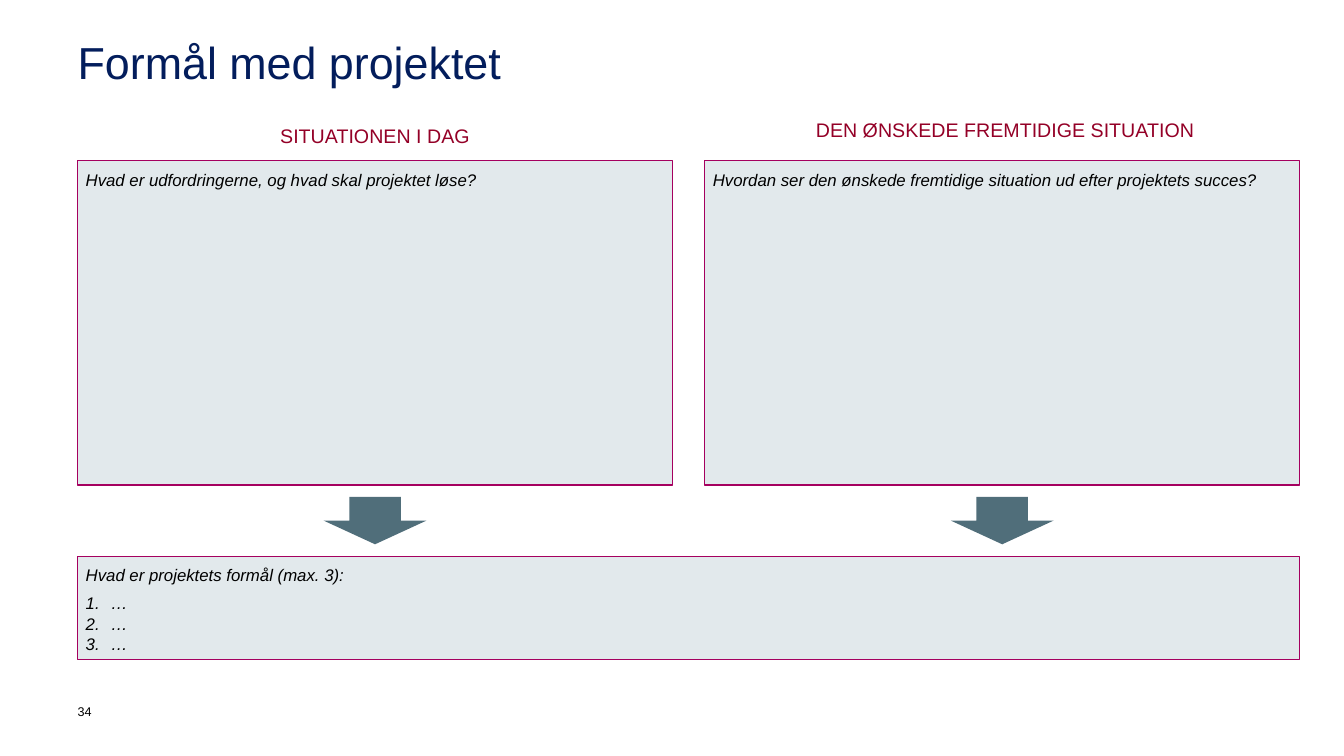
"""Build a slide on the purpose of a project."""
from dataclasses import dataclass

from lxml.etree import SubElement
from pptx import Presentation
from pptx.dml.color import RGBColor
from pptx.enum.shapes import MSO_SHAPE
from pptx.enum.text import MSO_ANCHOR, PP_ALIGN
from pptx.oxml.ns import qn
from pptx.shapes.autoshape import Shape
from pptx.slide import Slide
from pptx.text.text import _Paragraph as Para
from pptx.util import Inches, Pt


@dataclass(frozen=True)
class Theme:
    """Colours, type sizes and font of the slide."""
    face: str = "Arial"
    navy: str = "031D5C"
    wine: str = "940027"
    edge: str = "A5005F"
    pale: str = "E2E9EC"
    slate: str = "506E7A"
    black: str = "000000"
    title: int = 32
    head: int = 14
    body: int = 12
    small: int = 9


@dataclass(frozen=True)
class Area:
    """A rectangle in inches."""
    left: float
    top: float
    width: float
    height: float


@dataclass(frozen=True)
class Column:
    """A heading above a panel that leads down by an arrow."""
    left: float
    title: str
    head: Area
    prompt: str


THEME = Theme()
LEFT = 0.77
WIDE = 5.9
RIGHT = 6.99
COLUMNS = [
    Column(LEFT, "SITUATIONEN I DAG", Area(LEFT, 1.21, WIDE, 0.24),
           "Hvad er udfordringerne, og hvad skal projektet løse?"),
    Column(RIGHT, "DEN ØNSKEDE FREMTIDIGE SITUATION", Area(7.05, 1.15, 5.84, 0.24),
           "Hvordan ser den ønskede fremtidige situation ud efter projektets succes?"),
]


def style(para: Para, size: int, color: str, italic: bool = False) -> None:
    """Set the font of a paragraph."""
    font = para.font
    font.name, font.size, font.italic = THEME.face, Pt(size), italic
    font.color.rgb = RGBColor.from_string(color)


def label(slide: Slide, area: Area, text: str, size: int, color: str,
          space: float = 1.0, align: PP_ALIGN = PP_ALIGN.LEFT) -> None:
    """Add a line of text without margins."""
    box = slide.shapes.add_textbox(Inches(area.left), Inches(area.top),
                                   Inches(area.width), Inches(area.height))
    frame = box.text_frame
    frame.word_wrap = True
    frame.margin_left = frame.margin_right = frame.margin_top = frame.margin_bottom = 0
    para = frame.paragraphs[0]
    para.text, para.alignment, para.line_spacing = text, align, space
    style(para, size, color)


def solid(slide: Slide, kind: MSO_SHAPE, area: Area, color: str) -> Shape:
    """Add a filled shape with no line or shadow."""
    shape = slide.shapes.add_shape(kind, Inches(area.left), Inches(area.top),
                                   Inches(area.width), Inches(area.height))
    shape.shadow.inherit = False
    shape.fill.solid()
    shape.fill.fore_color.rgb = RGBColor.from_string(color)
    shape.line.fill.background()
    return shape


def panel(slide: Slide, area: Area, prompt: str, space: float = 1.08) -> Shape:
    """Add a framed panel with a prompt at its top."""
    shape = solid(slide, MSO_SHAPE.RECTANGLE, area, THEME.pale)
    shape.line.color.rgb = RGBColor.from_string(THEME.edge)
    shape.line.width = Pt(1)
    frame = shape.text_frame
    frame.word_wrap = True
    frame.vertical_anchor = MSO_ANCHOR.TOP
    frame.margin_left = frame.margin_right = Inches(0.08)
    frame.margin_top = frame.margin_bottom = Inches(0.08)
    para = frame.paragraphs[0]
    para.text, para.alignment, para.line_spacing = prompt, PP_ALIGN.LEFT, space
    style(para, THEME.body, THEME.black, True)
    return shape


def number(para: Para) -> None:
    """Give a paragraph an automatic number and a hanging indent."""
    props = para._p.get_or_add_pPr()
    props.set("marL", str(Inches(0.25)))
    props.set("indent", str(-Inches(0.25)))
    SubElement(props, qn("a:buFont"), typeface=THEME.face)
    SubElement(props, qn("a:buAutoNum"), type="arabicPeriod")


def goals(slide: Slide) -> None:
    """Add the panel with the numbered goals."""
    area = Area(LEFT, 5.52, RIGHT + WIDE - LEFT, 1.02)
    frame = panel(slide, area, "Hvad er projektets formål (max. 3):", 1.0).text_frame
    frame.paragraphs[0].space_after = Pt(6)
    for _ in range(3):
        para = frame.add_paragraph()
        para.text, para.alignment = "…", PP_ALIGN.LEFT
        number(para)
        style(para, THEME.body, THEME.black, True)


def main() -> None:
    """Build and save the slide."""
    deck = Presentation()
    deck.slide_width, deck.slide_height = Inches(13.33), Inches(7.5)
    slide = deck.slides.add_slide(deck.slide_layouts[6])
    label(slide, Area(LEFT, 0.4, 11.8, 1.02), "Formål med projektet",
          THEME.title, THEME.navy, 0.9)
    for col in COLUMNS:
        label(slide, col.head, col.title, THEME.head, THEME.wine, 1.08, PP_ALIGN.CENTER)
        panel(slide, Area(col.left, 1.59, WIDE, 3.22), col.prompt)
        solid(slide, MSO_SHAPE.DOWN_ARROW, Area(col.left + 2.44, 4.93, 1.02, 0.47),
              THEME.slate)
    goals(slide)
    label(slide, Area(LEFT, 6.98, 0.31, 0.39), "34", THEME.small, THEME.black)
    deck.save("out.pptx")


if __name__ == "__main__":
    main()
